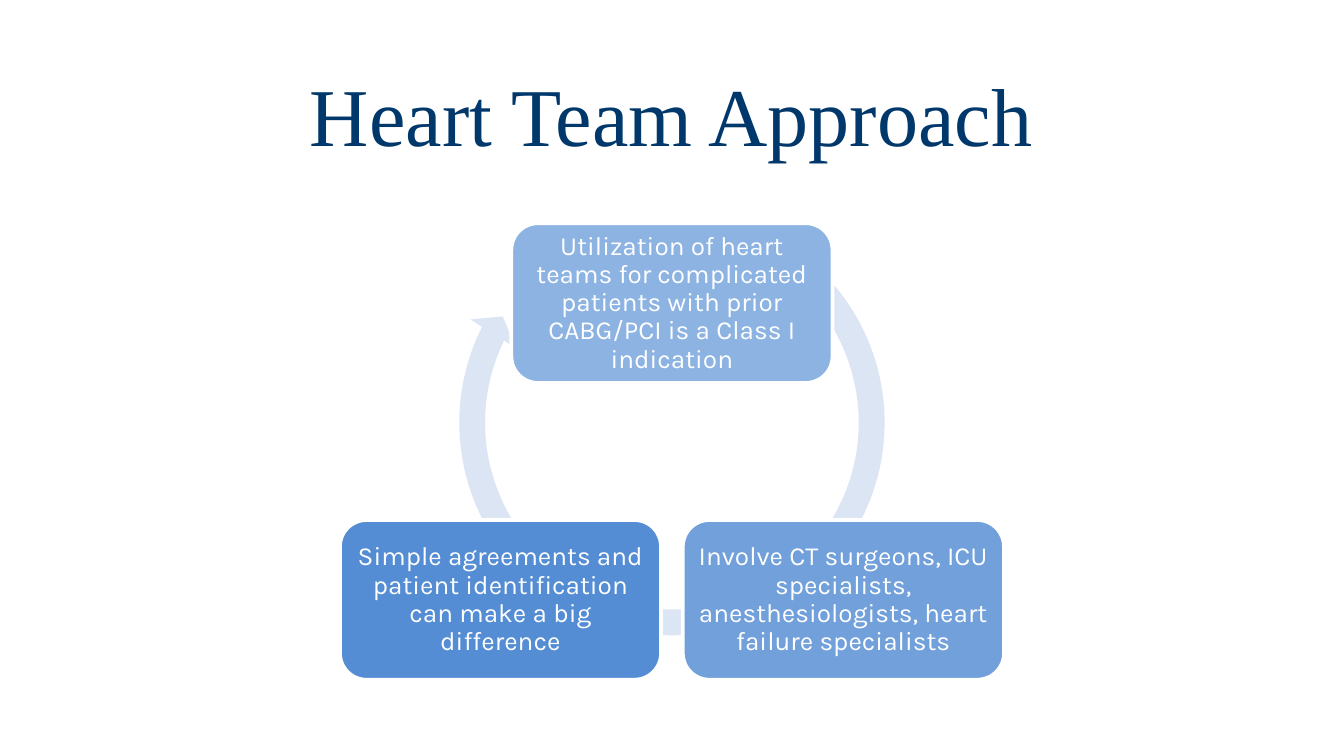
import pptx
import pptx.util
import pptx.dml.color
import pptx.enum.shapes
import pptx.enum.text

Cm = pptx.util.Cm
Pt = pptx.util.Pt
SHAPES = pptx.enum.shapes.MSO_SHAPE

MIDDLE_X = 12.7
BOX_WIDTH, BOX_HEIGHT = 6.07, 3.02
TOP_ROW, BOTTOM_ROW = 4.22, 9.83
SIDE_OFFSET = 3.24
RING_SIZE, RING_TOP = 8.56, 3.71

# Text, fill, distance of the box centre from the middle, top
STEPS = [
    ("Utilization of heart teams for complicated patients with prior "
     "CABG/PCI is a Class I indication", "8DB3E2", 0, TOP_ROW),
    ("Involve CT surgeons, ICU specialists, anesthesiologists, "
     "heart failure specialists", "71A0DB", SIDE_OFFSET, BOTTOM_ROW),
    ("Simple agreements and patient identification can make a big "
     "difference", "548DD4", -SIDE_OFFSET, BOTTOM_ROW),
]


def color(value):
    return pptx.dml.color.RGBColor.from_string(value)


def set_values(target, values):
    for name, value in values.items():
        setattr(target, name, value)


def write_text(box, text, font, size, shade, inset, spacing):
    frame = box.text_frame
    set_values(frame, {
        "word_wrap": True,
        "vertical_anchor": pptx.enum.text.MSO_ANCHOR.MIDDLE,
        "margin_left": Cm(inset), "margin_right": Cm(inset),
        "margin_top": Cm(inset), "margin_bottom": Cm(inset),
    })
    para = frame.paragraphs[0]
    set_values(para, {"alignment": pptx.enum.text.PP_ALIGN.CENTER,
                      "line_spacing": spacing})
    span = para.add_run()
    span.text = text
    set_values(span.font, {"name": font, "size": Pt(size)})
    span.font.color.rgb = color(shade)


def add_filled(page, kind, left, top, width, height, fill):
    shape = page.shapes.add_shape(kind, Cm(left), Cm(top), Cm(width), Cm(height))
    shape.shadow.inherit = False
    shape.fill.solid()
    shape.fill.fore_color.rgb = color(fill)
    shape.line.fill.background()
    return shape


def add_title(page, text):
    box = page.shapes.add_textbox(Cm(1.73), Cm(0.76), Cm(21.92), Cm(2.77))
    write_text(box, text, "Times New Roman", 44, "00386B", 0.2, 1.0)


def add_cycle_arrow(page):
    arrow = add_filled(page, SHAPES.CIRCULAR_ARROW, MIDDLE_X - RING_SIZE / 2,
                       RING_TOP, RING_SIZE, RING_SIZE, "DBE5F4")
    # Thickness, head angle, end angle, start angle, head width
    for index, value in enumerate([0.057, 3.405, 123.869, 182.947, 0.059]):
        arrow.adjustments[index] = value


def add_step(page, text, fill, offset, top):
    box = add_filled(page, SHAPES.ROUNDED_RECTANGLE,
                     MIDDLE_X + offset - BOX_WIDTH / 2, top,
                     BOX_WIDTH, BOX_HEIGHT, fill)
    box.line.color.rgb = color("FFFFFF")
    box.line.width = Pt(2)
    write_text(box, text, "Karla", 14, "FFFFFF", 0.15, 0.9)


def main():
    deck = pptx.Presentation()
    set_values(deck, {"slide_width": Cm(25.4), "slide_height": Cm(14.29)})
    page = deck.slides.add_slide(deck.slide_layouts[6])

    # Heading
    add_title(page, "Heart Team Approach")

    # Cycle: ring behind, steps in front
    add_cycle_arrow(page)
    for step in STEPS:
        add_step(page, *step)

    deck.save("out.pptx")


if __name__ == "__main__":
    main()
